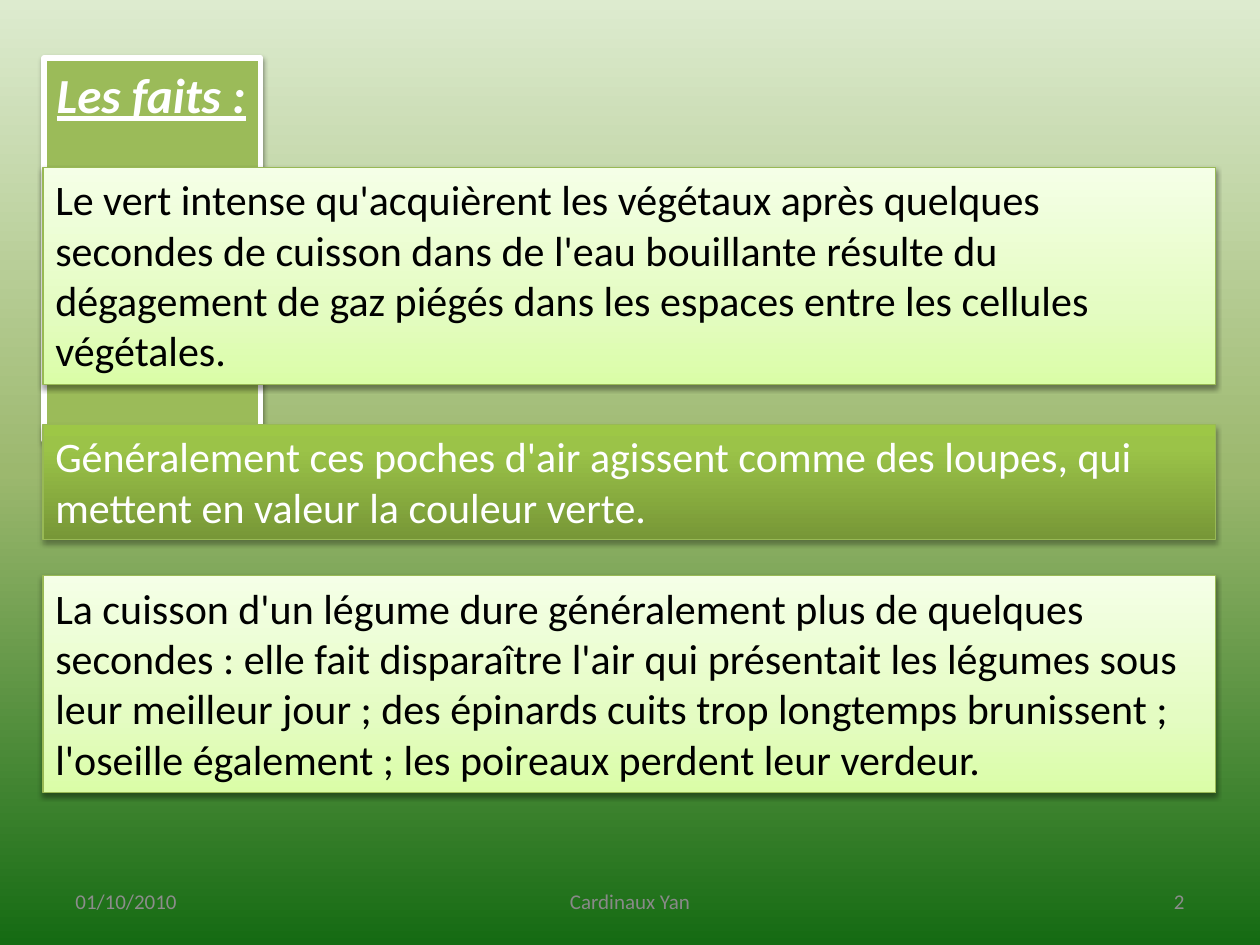
import pptx
import pptx.dml.color
import pptx.enum.shapes
import pptx.enum.text
import pptx.oxml.ns
import pptx.util
from lxml import etree

Pt = pptx.util.Pt
ALIGN = pptx.enum.text.PP_ALIGN
ANCHOR = pptx.enum.text.MSO_ANCHOR
AUTO_SIZE = pptx.enum.text.MSO_AUTO_SIZE
qn = pptx.oxml.ns.qn

COLORS = {
    "white": "FFFFFF",
    "black": "000000",
    "title": "9BBB59",
    "outline": "98B955",
    "footer": "8C8C8C",
    "author": "898989",
}
GRADIENTS = {
    "background": [(0, "DDEBCF"), (50, "9CB86E"), (100, "156B13")],
    "light": [(0, "DAFDA7"), (35, "E4FCC2"), (100, "F5FFE7")],
    "dark": [(0, "779737"), (80, "9BC348"), (100, "9DC746")],
}
FACTS = [
    (95.76, 123.84, "light", "black",
     "Le vert intense qu'acquièrent les végétaux après quelques secondes de cuisson "
     "dans de l'eau bouillante résulte du dégagement de gaz piégés dans les espaces "
     "entre les cellules végétales."),
    (242.64, 65.52, "dark", "white",
     "Généralement ces poches d'air agissent comme des loupes, qui mettent en valeur "
     "la couleur verte."),
    (329.04, 123.84, "light", "black",
     "La cuisson d'un légume dure généralement plus de quelques secondes : elle fait "
     "disparaître l'air qui présentait les légumes sous leur meilleur jour ; des "
     "épinards cuits trop longtemps brunissent ; l'oseille également ; les poireaux "
     "perdent leur verdeur."),
]
FOOTERS = [
    (36, 168, "01/10/2010", ALIGN.LEFT, "footer"),
    (246, 228, "Cardinaux Yan", ALIGN.CENTER, "author"),
    (516, 168, "2", ALIGN.RIGHT, "footer"),
]


def rgb(name):
    return pptx.dml.color.RGBColor.from_string(COLORS[name])


def set_gradient(fill, element, name, angle):
    fill.gradient()
    fill.gradient_angle = angle
    stops = element.find(".//" + qn("a:gsLst"))
    for stop in list(stops):
        stops.remove(stop)
    for position, color in GRADIENTS[name]:
        stop = etree.SubElement(stops, qn("a:gs"), pos=str(position * 1000))
        etree.SubElement(stop, qn("a:srgbClr"), val=color)


def set_outline(shape, color, width):
    shape.line.color.rgb = rgb(color)
    shape.line.width = Pt(width)


def add_shadow(shape, distance=1.6, opacity=38):
    shape.shadow.inherit = False
    effects = shape._element.spPr.find(qn("a:effectLst"))
    shadow = etree.SubElement(
        effects, qn("a:outerShdw"), blurRad=str(Pt(3.1)), dist=str(Pt(distance)),
        dir="5400000", rotWithShape="0")
    color = etree.SubElement(shadow, qn("a:srgbClr"), val=COLORS["black"])
    etree.SubElement(color, qn("a:alpha"), val=str(opacity * 1000))


def write_text(shape, text, size, color, align=ALIGN.LEFT, anchor=ANCHOR.TOP,
               wrap=True, auto_size=AUTO_SIZE.SHAPE_TO_FIT_TEXT):
    frame = shape.text_frame
    frame.text = text
    frame.word_wrap = wrap
    frame.auto_size = auto_size
    frame.vertical_anchor = anchor
    paragraph = frame.paragraphs[0]
    paragraph.alignment = align
    paragraph.font.name = "Calibri"
    paragraph.font.size = Pt(size)
    paragraph.font.color.rgb = rgb(color)
    return paragraph


def place_title(slide, left, top, width, height):
    title = slide.shapes.title
    title.left, title.top, title.width, title.height = map(Pt, (left, top, width, height))
    title.fill.solid()
    title.fill.fore_color.rgb = rgb("title")
    set_outline(title, "white", 3)
    add_shadow(title)
    heading = write_text(title, "Les faits :", 28, "white", wrap=False)
    heading.font.bold = heading.font.italic = heading.font.underline = True


def add_fact(slide, left, top, width, height, gradient, color, text):
    fact = slide.shapes.add_shape(
        pptx.enum.shapes.MSO_SHAPE.RECTANGLE, *map(Pt, (left, top, width, height)))
    set_gradient(fact.fill, fact._element, gradient, 90)
    set_outline(fact, "outline", 0.75)
    if gradient == "dark":
        add_shadow(fact, distance=1.8, opacity=35)
    else:
        add_shadow(fact)
    write_text(fact, text, 24, color)


def add_footer(slide, top, height):
    for left, width, text, align, color in FOOTERS:
        entry = slide.shapes.add_textbox(*map(Pt, (left, top, width, height)))
        write_text(entry, text, 12, color, align, ANCHOR.MIDDLE, auto_size=AUTO_SIZE.NONE)


def main():
    deck = pptx.Presentation()
    deck.slide_width, deck.slide_height = Pt(720), Pt(540)
    slide = deck.slides.add_slide(deck.slide_layouts.get_by_name("Title Only"))
    set_gradient(slide.background.fill, slide._element, "background", 270)
    place_title(slide, 25.2, 33.12, 123.84, 41.04)
    for top, height, gradient, color, text in FACTS:
        add_fact(slide, 24.5, top, 670.3, height, gradient, color, text)
    add_footer(slide, 500.5, 28.75)
    deck.save("out.pptx")


if __name__ == "__main__":
    main()
